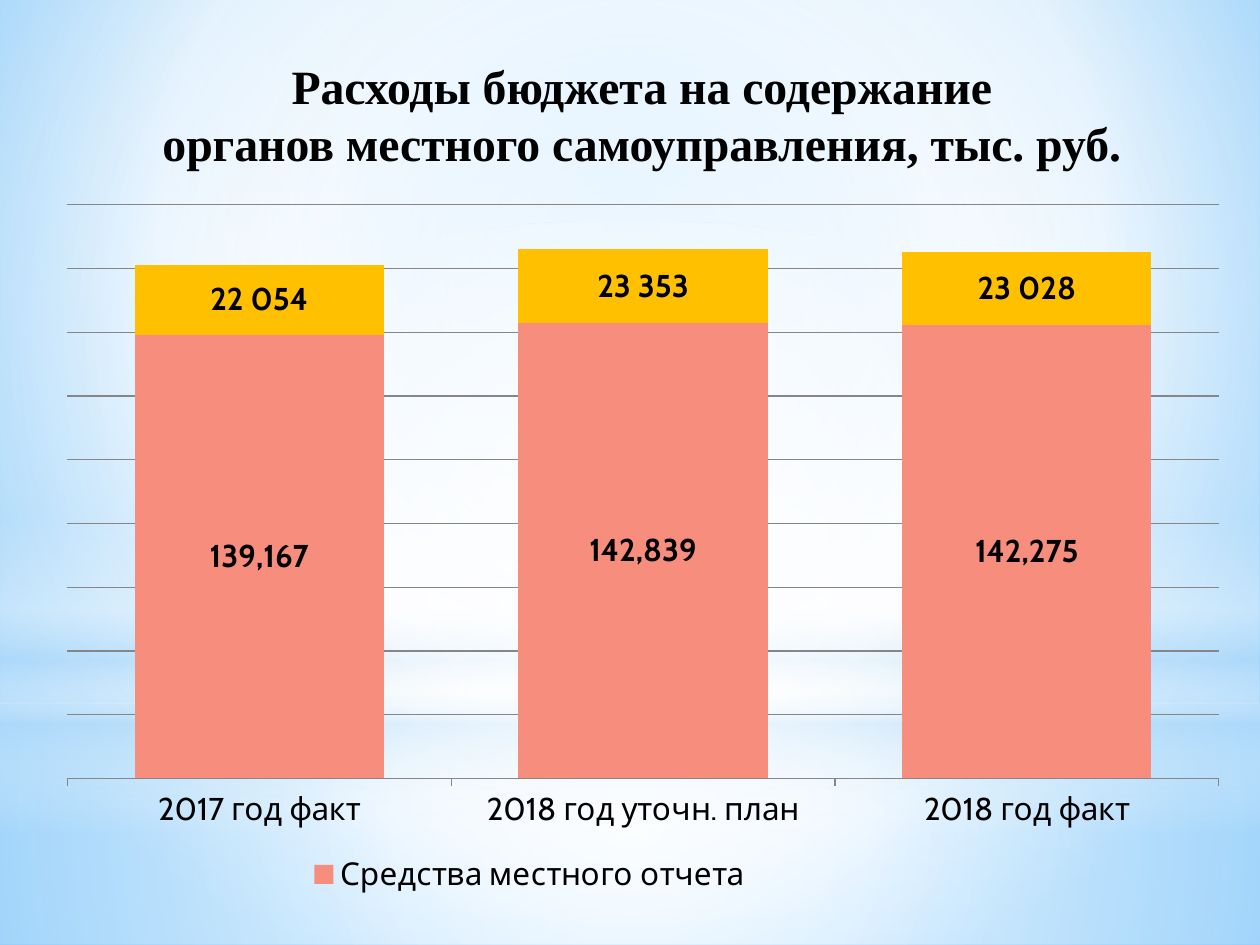
from lxml import etree
from pptx import Presentation
from pptx import util as u
from pptx.chart.data import CategoryChartData
from pptx.dml.color import RGBColor
from pptx.enum import chart as ch, shapes, text
from pptx.oxml import parse_xml
from pptx.oxml.ns import nsdecls, qn

COLORS = {
    "white": "FFFFFF", "pale": "B4DCFA", "sky": "9ED5FF", "blue": "5BB9FF",
    "black": "000000", "grid": "868686", "lower": "F78D7C", "upper": "FFC000",
}
CATEGORIES = ["2017 год факт", "2018 год уточн. план", "2018 год факт"]
LOWER = ("Средства местного отчета", [139167, 142839, 142275])
UPPER = ("", [22054, 23353, 23028])
CENTRE = (50, 50, 50, 50)


def rgb(name):
    return RGBColor.from_string(COLORS[name])


def format_font(font, size, name, color="black", bold=False):
    font.size = u.Pt(size)
    font.name = name
    font.bold = bold
    font.color.rgb = rgb(color)


def write_text(frame, lines, align=text.PP_ALIGN.CENTER, spacing=None, **style):
    for index, line in enumerate(lines):
        paragraph = frame.paragraphs[0] if index == 0 else frame.add_paragraph()
        paragraph.alignment = align
        if spacing:
            paragraph.line_spacing = spacing
        run = paragraph.add_run()
        run.text = line
        format_font(run.font, **style)


def set_gradient(parent, stops, focus=None, angle=0):
    """Swap the solid fill in parent for a circular (focus) or linear gradient.

    Stops are (position %, colour name, opacity %).
    """
    stop_xml = "".join(
        f'<a:gs pos="{position * 1000}"><a:srgbClr val="{COLORS[color]}">'
        f'<a:alpha val="{opacity * 1000}"/></a:srgbClr></a:gs>'
        for position, color, opacity in stops)
    if focus:
        sides = " ".join(f'{side}="{value * 1000}"' for side, value in zip("ltrb", focus))
        shade = f'<a:path path="circle"><a:fillToRect {sides}/></a:path>'
    else:
        shade = f'<a:lin ang="{angle * 60000}" scaled="0"/>'
    gradient = parse_xml(f'<a:gradFill {nsdecls("a")} rotWithShape="1">'
                         f'<a:gsLst>{stop_xml}</a:gsLst>{shade}</a:gradFill>')
    parent.replace(parent.find(qn("a:solidFill")), gradient)


def set_layout(parent, position, x, y, width, height, inner=False):
    """Put a manual layout, in fractions of the chart, into a chart part."""
    for old in parent.findall(qn("c:layout")):
        parent.remove(old)
    layout = etree.Element(qn("c:layout"))
    manual = etree.SubElement(layout, qn("c:manualLayout"))
    values = [("xMode", "edge"), ("yMode", "edge"),
              ("x", x), ("y", y), ("w", width), ("h", height)]
    if inner:
        values.insert(0, ("layoutTarget", "inner"))
    for tag, value in values:
        etree.SubElement(manual, qn(f"c:{tag}")).set("val", str(value))
    parent.insert(position, layout)


class SlideBuilder:
    def __init__(self, slide):
        self.slide = slide
        self.title_style = dict(size=27.3, name="Times New Roman", bold=True)
        self.chart_style = dict(size=18, name="Cabin")

    def background(self, stops, focus):
        self.slide.background.fill.solid()
        self.slide.background.fill.fore_color.rgb = rgb("white")
        set_gradient(self.slide.element.xpath(".//p:bgPr")[0], stops, focus)

    def glow(self, kind, top, height, stops, **gradient):
        shape = self.slide.shapes.add_shape(
            kind, 0, u.Inches(top), u.Inches(10), u.Inches(height))
        shape.shadow.inherit = False
        shape.line.fill.background()
        shape.fill.solid()
        shape.fill.fore_color.rgb = rgb("white")
        set_gradient(shape.element.spPr, stops, **gradient)

    def title(self, lines, left, top, width, height):
        box = self.slide.shapes.add_textbox(*map(u.Inches, (left, top, width, height)))
        frame = box.text_frame
        frame.word_wrap = True
        frame.vertical_anchor = text.MSO_ANCHOR.MIDDLE
        write_text(frame, lines, spacing=1, **self.title_style)

    def stacked_chart(self, left, top, width, height):
        data = CategoryChartData(number_format="#,##0")
        data.categories = CATEGORIES
        for name, values in (LOWER, UPPER):
            data.add_series(name, values)
        chart = self.slide.shapes.add_chart(
            ch.XL_CHART_TYPE.COLUMN_STACKED,
            *map(u.Inches, (left, top, width, height)), data).chart
        format_font(chart.font, **self.chart_style)
        chart.has_title = False
        self.axes(chart)
        self.columns(chart.plots[0])
        self.legend(chart)
        set_layout(chart.element.xpath(".//c:plotArea")[0], 0,
                   0.027, 0, 0.967, 0.801, inner=True)

    def axes(self, chart):
        values = chart.value_axis
        values.minimum_scale, values.maximum_scale = 0, 180000
        values.major_unit = 20000
        values.visible = False
        values.has_major_gridlines = True
        categories = chart.category_axis
        categories.major_tick_mark = ch.XL_TICK_MARK.OUTSIDE
        for line in (values.major_gridlines.format.line, categories.format.line):
            line.color.rgb = rgb("grid")
            line.width = u.Pt(0.75)

    def columns(self, plot):
        plot.gap_width, plot.overlap = 54, 100
        plot.vary_by_categories = False
        for series, color in zip(plot.series, ("lower", "upper")):
            series.format.fill.solid()
            series.format.fill.fore_color.rgb = rgb(color)
            labels = series.data_labels
            labels.show_value = True
            labels.number_format = "#,##0"
            labels.number_format_is_linked = False
            labels.position = ch.XL_LABEL_POSITION.CENTER
            format_font(labels.font, bold=True, **self.chart_style)
        for index, value in enumerate(UPPER[1]):
            label = plot.series[1].points[index].data_label
            write_text(label.text_frame, [f"{value:,}".replace(",", " ")],
                       bold=True, **self.chart_style)
            label.position = ch.XL_LABEL_POSITION.CENTER

    def legend(self, chart):
        """Show the legend below the plot, with the named series only."""
        chart.has_legend = True
        chart.legend.position = ch.XL_LEGEND_POSITION.BOTTOM
        chart.legend.include_in_layout = False
        format_font(chart.legend.font, **self.chart_style)
        element = chart.element.xpath(".//c:legend")[0]
        element.insert(1, parse_xml(f'<c:legendEntry {nsdecls("c")}><c:idx val="1"/>'
                                    '<c:delete val="1"/></c:legendEntry>'))
        set_layout(element, 2, 0.22, 0.9, 0.39, 0.07)


def main():
    presentation = Presentation()
    presentation.slide_width, presentation.slide_height = u.Inches(10), u.Inches(7.5)
    builder = SlideBuilder(presentation.slides.add_slide(presentation.slide_layouts[6]))
    rectangle, oval = shapes.MSO_SHAPE.RECTANGLE, shapes.MSO_SHAPE.OVAL

    builder.background([(0, "sky", 100), (60, "white", 100), (100, "blue", 100)],
                       (20, 10, 20, 60))
    builder.glow(rectangle, 5.58, 1.92,
                 [(0, "white", 91), (37, "white", 76), (100, "pale", 79)], focus=CENTRE)
    builder.glow(rectangle, 0, 5.58,
                 [(0, "white", 89), (48, "white", 62), (100, "pale", 79)], focus=CENTRE)
    builder.glow(rectangle, 4.12, 2.5,
                 [(0, "white", 0), (29, "white", 30), (45, "pale", 40),
                  (55, "white", 26), (65, "pale", 60), (100, "white", 0)], angle=90)
    builder.glow(oval, 1.75, 5.58, [(0, "white", 100), (56, "white", 0)], focus=CENTRE)
    builder.title(["Расходы бюджета на содержание",
                   "органов местного самоуправления, тыс. руб."], 0.35, 0.29, 9.49, 1.23)
    builder.stacked_chart(0.28, 1.62, 9.45, 5.69)
    presentation.save("out.pptx")


if __name__ == "__main__":
    main()
